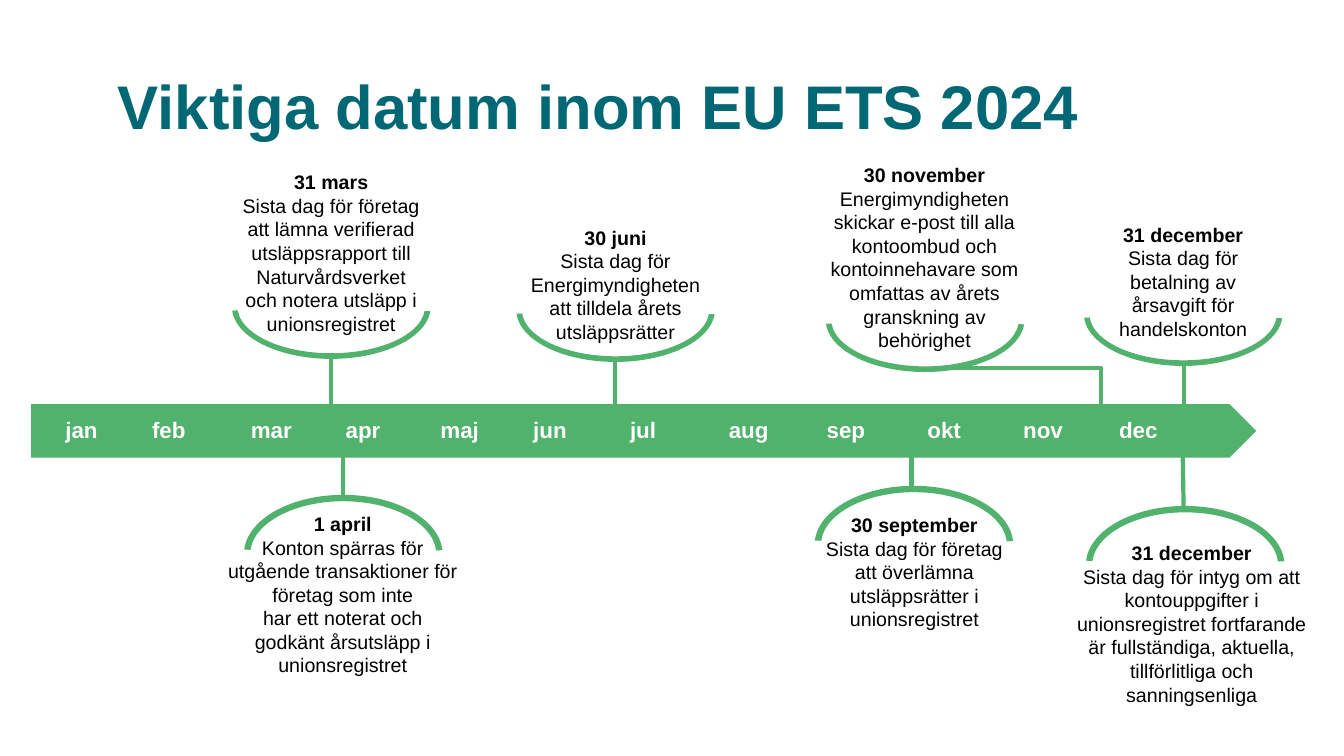
from lxml import etree
from pptx import Presentation
from pptx.dml.color import RGBColor
from pptx.enum.shapes import MSO_CONNECTOR, MSO_SHAPE
from pptx.enum.text import PP_ALIGN
from pptx.oxml.ns import qn
from pptx.util import Inches, Pt

STRAIGHT, ELBOW = MSO_CONNECTOR.STRAIGHT, MSO_CONNECTOR.ELBOW
ARC, PENTAGON = MSO_SHAPE.BLOCK_ARC, MSO_SHAPE.PENTAGON
LEFT, CENTER = PP_ALIGN.LEFT, PP_ALIGN.CENTER
COLORS = {"title": "006875", "green": "50B26C", "white": "FFFFFF", "black": "000000"}

MONTHS = {
    "jan": 0.55, "feb": 1.41, "mar": 2.39, "apr": 3.33, "maj": 4.27, "jun": 5.19,
    "jul": 6.15, "aug": 7.13, "sep": 8.1, "okt": 9.1, "nov": 10.05, "dec": 11,
}

DEADLINES_ABOVE = [
    ((2.27, 1.64, 2.03, 1.78), (2.3, 2.53),
     ["31 mars",
      "Sista dag för företag att lämna verifierad utsläppsrapport till "
      "Naturvårdsverket och notera utsläpp i unionsregistret"]),
    ((5.09, 2.19, 2.03, 1.28), (5.12, 2.56),
     ["30 juni",
      "Sista dag för Energimyndigheten att tilldela årets utsläppsrätter"]),
    ((7.91, 1.57, 2.52, 2.02), (8.19, 2.66),
     ["30 november",
      "Energimyndigheten skickar e-post till alla kontoombud och",
      "kontoinnehavare som omfattas av årets granskning av",
      "behörighet"]),
    ((10.73, 2.16, 2.01, 1.28), (10.75, 2.6),
     ["31 december", "Sista dag för betalning av årsavgift för handelskonton"]),
]

DEADLINES_BELOW = [
    ((2.14, 5.03, 2.52, 1.75), (2.42, 4.91),
     ["1 april",
      "Konton spärras för utgående transaktioner för företag som inte",
      "har ett noterat och",
      "godkänt årsutsläpp i unionsregistret"]),
    ((8, 5.04, 2.14, 1.28), (8.08, 4.82),
     ["30 september",
      "Sista dag för företag att överlämna utsläppsrätter i unionsregistret"]),
    ((10.46, 5.32, 2.72, 1.75), (10.77, 5.02),
     ["31 december",
      "Sista dag för intyg om att kontouppgifter i unionsregistret fortfarande",
      "är fullständiga, aktuella, tillförlitliga och sanningsenliga"]),
]

STEMS = [
    ((3.28, 3.51), (3.28, 4.04)),
    ((6.1, 3.58), (6.1, 4.03)),
    ((11.74, 3.61), (11.74, 4.07)),
    ((3.4, 4.47), (3.4, 4.95)),
    ((9.04, 4.39), (9.04, 4.85)),
    ((11.73, 4.48), (11.74, 5.06)),
]


class Timeline:
    """Draws timeline elements in one style on the current slide."""

    def __init__(self, slide):
        self.shapes = slide.shapes
        self.font = "Arial"

    def text(self, box, lines, size, color, align=LEFT, spacing=None):
        frame = self.shapes.add_textbox(*map(Inches, box)).text_frame
        frame.word_wrap = True
        frame.text = "\n".join(lines)
        for index, paragraph in enumerate(frame.paragraphs):
            paragraph.alignment = align
            if spacing:
                paragraph.line_spacing = spacing
            font = paragraph.runs[0].font
            font.name, font.size, font.bold = self.font, Pt(size), index == 0
            font.color.rgb = RGBColor.from_string(COLORS[color])

    def block(self, kind, box):
        block = self.shapes.add_shape(kind, *map(Inches, box))
        block.shadow.inherit = False
        block.fill.solid()
        block.fill.fore_color.rgb = RGBColor.from_string(COLORS["green"])
        block.line.fill.background()
        return block

    def arc(self, corner, height, rotation):
        arc = self.block(ARC, (*corner, 1.97, height))
        arc.rotation = rotation
        for index, value in enumerate((109.48, 214.724, 0.054)):
            arc.adjustments[index] = value

    def line(self, start, end, kind=STRAIGHT):
        line = self.shapes.add_connector(kind, *map(Inches, (*start, *end)))
        line.line.color.rgb = RGBColor.from_string(COLORS["green"])
        line.line.width = Pt(3)
        etree.SubElement(line._element.spPr, qn("a:effectLst"))
        return line

    def bent_arrow(self, start, end, bend):
        arrow = self.line(start, end, ELBOW)
        properties = arrow._element.spPr
        guides = properties.find(qn("a:prstGeom")).find(qn("a:avLst"))
        etree.SubElement(guides, qn("a:gd"), name="adj1", fmla=f"val {round(bend * 100000)}")
        etree.SubElement(properties.find(qn("a:ln")), qn("a:tailEnd"), type="triangle")

    def deadlines(self, entries, arc_height, rotation):
        for box, corner, lines in entries:
            self.text(box, lines, 14, "black", CENTER)
            self.arc(corner, arc_height, rotation)


def main():
    deck = Presentation()
    deck.slide_width, deck.slide_height = Inches(13.33), Inches(7.5)
    timeline = Timeline(deck.slides.add_slide(deck.slide_layouts[6]))

    timeline.text((1.07, 0.71, 11.35, 1.42), ["Viktiga datum inom EU ETS 2024"],
                  44, "title", spacing=0.9)
    timeline.block(PENTAGON, (0.31, 4.01, 12.15, 0.53))
    for month, left in MONTHS.items():
        timeline.text((left, 4.08, 0.62, 0.37), [month], 16, "white")
    timeline.deadlines(DEADLINES_ABOVE, 1.03, 180)
    timeline.deadlines(DEADLINES_BELOW, 1.17, 0)
    for start, end in STEMS:
        timeline.line(start, end)
    timeline.bent_arrow((9.31, 3.65), (11.49, 4.12), 0.74)

    deck.save("out.pptx")


if __name__ == "__main__":
    main()
